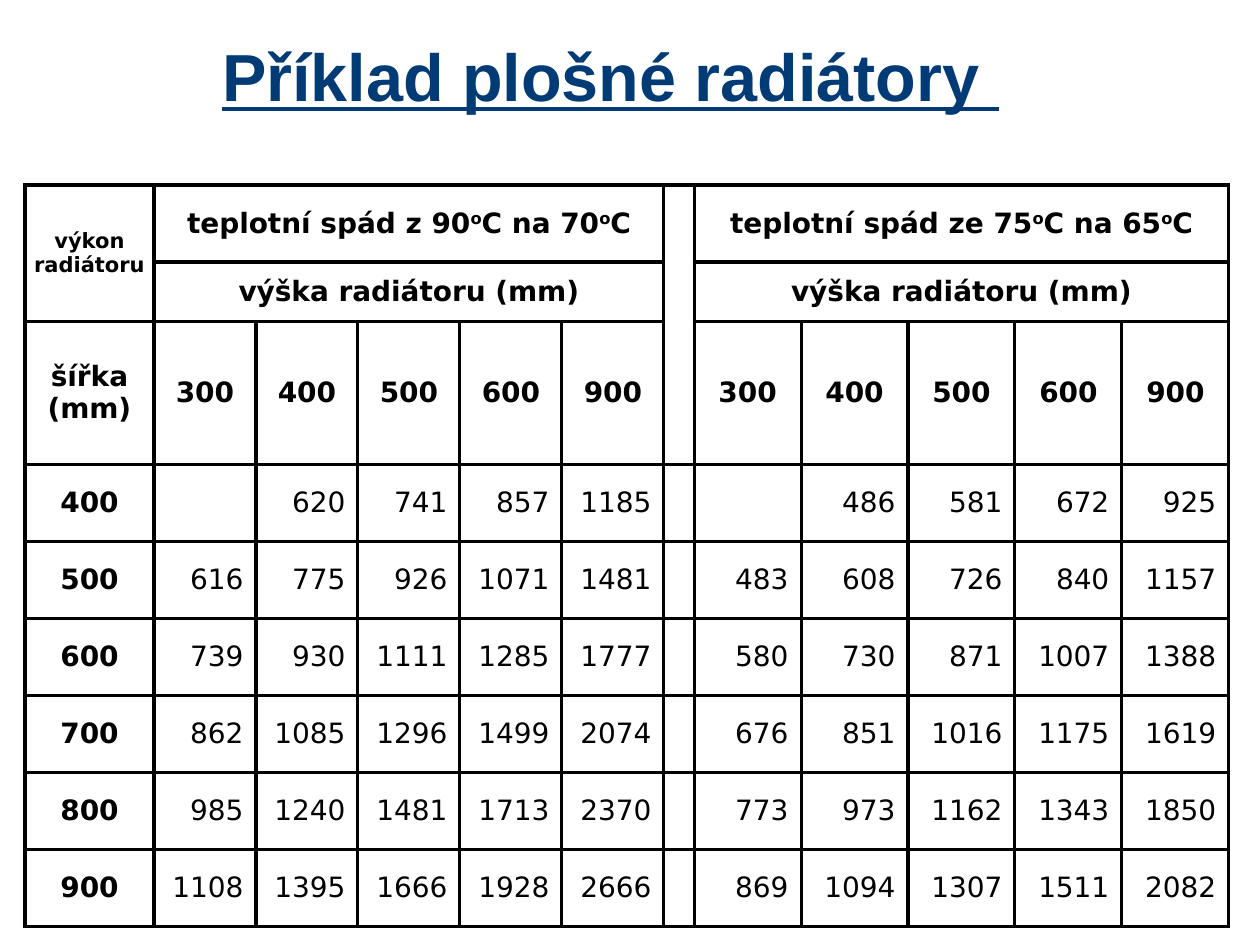
import pptx
import pptx.dml.color
import pptx.enum.text
import pptx.oxml
import pptx.oxml.ns
import pptx.util

EMU_PER_PX = 914400 / 126
COLORS = {"title": "003B76", "text": "000000", "border": "000000"}
TITLE_FONT = "Arial"
TABLE_FONT = "DejaVu Sans"
ALIGN = pptx.enum.text.PP_ALIGN
MIDDLE = pptx.enum.text.MSO_ANCHOR.MIDDLE

COLUMN_WIDTHS = [129] + [102] * 5 + [30] + [107] * 5
ROW_HEIGHTS = [77, 59, 143] + [77] * 6
SPACER_COLUMN = 6
RADIATOR_HEIGHTS = [300, 400, 500, 600, 900]
# First column and header of each group; text between carets is superscript.
GROUPS = [
    (1, "teplotní spád z 90^o^C na 70^o^C"),
    (7, "teplotní spád ze 75^o^C na 65^o^C"),
]
# Radiator width: outputs of the first group, outputs of the second group.
OUTPUTS = {
    400: ([None, 620, 741, 857, 1185], [None, 486, 581, 672, 925]),
    500: ([616, 775, 926, 1071, 1481], [483, 608, 726, 840, 1157]),
    600: ([739, 930, 1111, 1285, 1777], [580, 730, 871, 1007, 1388]),
    700: ([862, 1085, 1296, 1499, 2074], [676, 851, 1016, 1175, 1619]),
    800: ([985, 1240, 1481, 1713, 2370], [773, 973, 1162, 1343, 1850]),
    900: ([1108, 1395, 1666, 1928, 2666], [869, 1094, 1307, 1511, 2082]),
}


def px(length):
    return pptx.util.Emu(round(length * EMU_PER_PX))


def write_text(frame, text, font=TABLE_FONT, size=16, color="text", bold=True,
               underline=False, align=ALIGN.CENTER):
    """Fill a text frame; a newline breaks the line, carets enclose superscript."""
    paragraph = frame.paragraphs[0]
    paragraph.alignment = align
    for line_number, line in enumerate(text.split("\n")):
        if line_number:
            paragraph.add_line_break()
        for part_number, part in enumerate(line.split("^")):
            run = paragraph.add_run()
            run.text = part
            run.font.name = font
            run.font.size = pptx.util.Pt(size)
            run.font.bold = bold
            run.font.underline = underline
            run.font.color.rgb = pptx.dml.color.RGBColor.from_string(COLORS[color])
            if part_number % 2:
                run.font._element.set("baseline", "30000")


def style_cell(cell):
    """Give a cell black borders, no fill and middle anchoring."""
    properties = cell._tc.get_or_add_tcPr()
    for side in ("lnL", "lnR", "lnT", "lnB"):
        properties.append(pptx.oxml.parse_xml(
            f'<a:{side} {pptx.oxml.ns.nsdecls("a")} w="{pptx.util.Pt(2)}">'
            f'<a:solidFill><a:srgbClr val="{COLORS["border"]}"/></a:solidFill>'
            f'</a:{side}>'))
    cell.fill.background()
    cell.vertical_anchor = MIDDLE


def add_title(slide, left, top, width, height):
    title = slide.shapes.title
    title.left, title.top = px(left), px(top)
    title.width, title.height = px(width), px(height)
    frame = title.text_frame
    frame.word_wrap = True
    frame.auto_size = pptx.enum.text.MSO_AUTO_SIZE.NONE
    frame.vertical_anchor = MIDDLE
    write_text(frame, "Příklad plošné radiátory ", font=TITLE_FONT, size=38,
               color="title", underline=True)


def fill_headers(table):
    corner = table.cell(0, 0)
    corner.merge(table.cell(1, 0))
    corner.margin_left = corner.margin_right = px(5)
    corner.margin_top = corner.margin_bottom = px(5)
    write_text(corner.text_frame, "výkon radiátoru", size=12)
    write_text(table.cell(2, 0).text_frame, "šířka\n(mm)")
    table.cell(0, SPACER_COLUMN).merge(table.cell(2, SPACER_COLUMN))

    last = len(RADIATOR_HEIGHTS) - 1
    for first_column, heading in GROUPS:
        for row, text in enumerate([heading, "výška radiátoru (mm)"]):
            cell = table.cell(row, first_column)
            cell.merge(table.cell(row, first_column + last))
            write_text(cell.text_frame, text)
        for offset, radiator_height in enumerate(RADIATOR_HEIGHTS):
            write_text(table.cell(2, first_column + offset).text_frame,
                       str(radiator_height))


def fill_outputs(table):
    for row, (radiator_width, groups) in enumerate(OUTPUTS.items(), start=3):
        write_text(table.cell(row, 0).text_frame, str(radiator_width))
        for (first_column, _), outputs in zip(GROUPS, groups):
            for column, output in enumerate(outputs, start=first_column):
                if output is not None:
                    write_text(table.cell(row, column).text_frame, str(output),
                               bold=False, align=ALIGN.RIGHT)


def add_output_table(slide, left, top):
    table = slide.shapes.add_table(
        len(ROW_HEIGHTS), len(COLUMN_WIDTHS), px(left), px(top),
        px(sum(COLUMN_WIDTHS)), px(sum(ROW_HEIGHTS))).table
    table.first_row = False
    table.horz_banding = False
    for column, width in zip(table.columns, COLUMN_WIDTHS):
        column.width = px(width)
    for row, height in zip(table.rows, ROW_HEIGHTS):
        row.height = px(height)
    for cell in table.iter_cells():
        style_cell(cell)
    fill_headers(table)
    fill_outputs(table)


def main():
    presentation = pptx.Presentation()
    presentation.slide_width = px(1260)
    presentation.slide_height = px(945)
    slide = presentation.slides.add_slide(presentation.slide_layouts[5])
    add_title(slide, 164, 25, 893, 100)
    add_output_table(slide, 25, 185)
    presentation.save("out.pptx")


if __name__ == "__main__":
    main()
